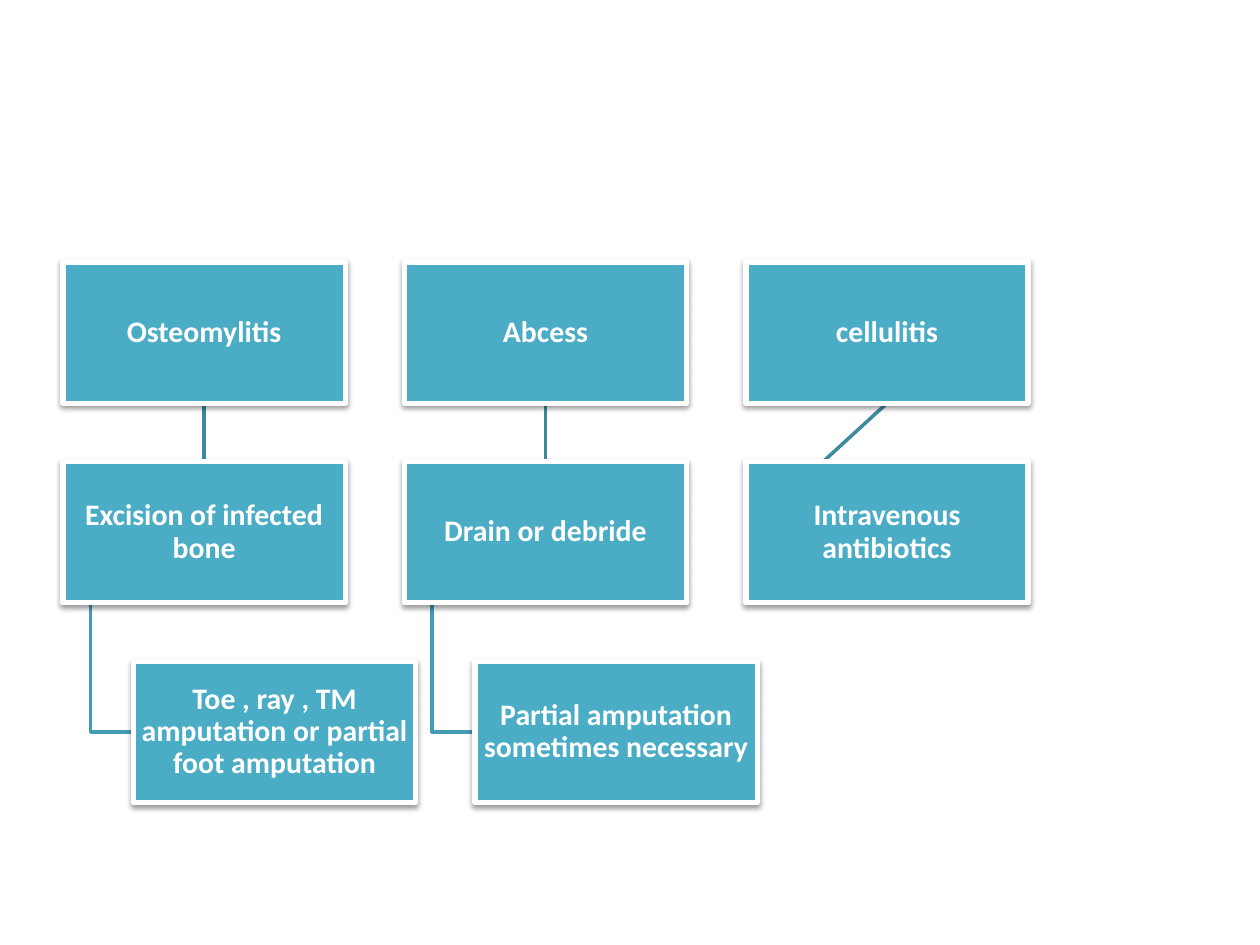
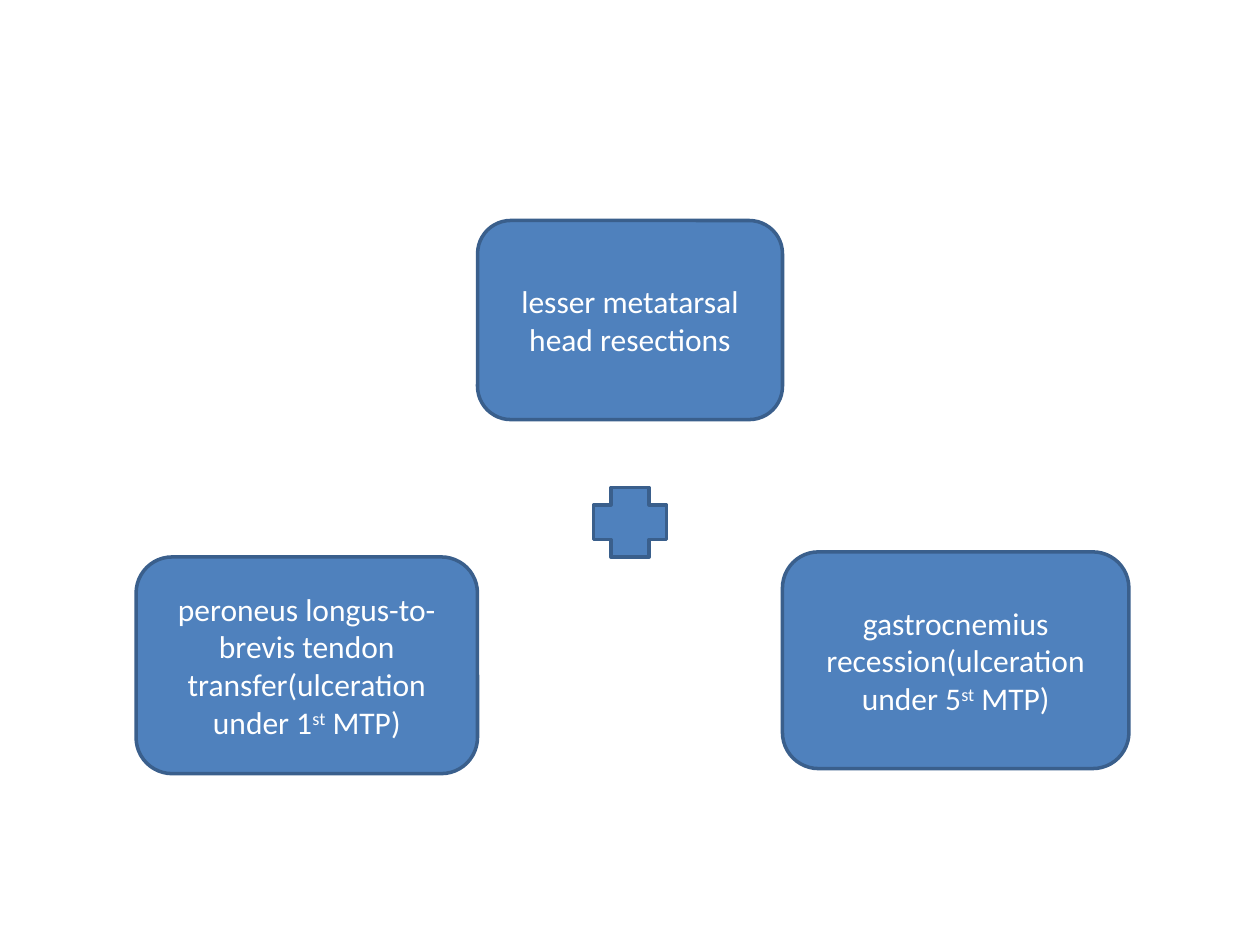
from lxml import etree
from pptx import Presentation
from pptx.dml.color import RGBColor
from pptx.enum.shapes import MSO_CONNECTOR, MSO_SHAPE
from pptx.enum.text import MSO_ANCHOR, PP_ALIGN
from pptx.oxml import parse_xml
from pptx.oxml.ns import nsdecls, qn
from pptx.util import Inches, Pt

COLORS = {
    "white": "FFFFFF",
    "teal": "4BACC6",
    "upper_link": "3C8A9F",
    "lower_link": "449CB4",
    "blue": "4F81BD",
    "blue_edge": "3A5F8C",
    "shadow": "000000",
}
FONT = "Calibri"

TREATMENTS = [
    ["Osteomylitis", "Excision of infected bone",
     "Toe , ray , TM amputation or partial foot amputation"],
    ["Abcess", "Drain or debride", "Partial amputation sometimes necessary"],
    ["cellulitis", "Intravenous antibiotics"],
]
PROCEDURES = [
    ((2.71, 0, 2.42, 1.58), ["lesser metatarsal head resections"]),
    ((5.13, 2.63, 2.75, 1.72),
     ["gastrocnemius recession(ulceration under 5", "st", " MTP)"]),
    ((0, 2.67, 2.71, 1.72),
     ["peroneus longus-to-brevis tendon transfer(ulceration under 1", "st", " MTP)"]),
]


def color(name):
    return RGBColor.from_string(COLORS[name])


def set_line(shape, name, width):
    shape.line.color.rgb = color(name)
    shape.line.width = Pt(width)


def add_box(page, kind, left, top, width, height, fill, edge, edge_width):
    box = page.shapes.add_shape(
        kind, Inches(left), Inches(top), Inches(width), Inches(height))
    box.shadow.inherit = False
    box.fill.solid()
    box.fill.fore_color.rgb = color(fill)
    set_line(box, edge, edge_width)
    return box


def write_text(box, parts, size, bold=False):
    frame = box.text_frame
    frame.word_wrap = True
    frame.vertical_anchor = MSO_ANCHOR.MIDDLE
    para = frame.paragraphs[0]
    para.alignment = PP_ALIGN.CENTER
    for part in parts:
        span = para.add_run()
        span.text = part
        span.font.name = FONT
        span.font.size = Pt(size)
        span.font.bold = bold
        span.font.color.rgb = color("white")
        if part == "st":
            span.font._element.set("baseline", "30000")
    return frame


def add_shadow(box):
    properties = box._element.spPr
    properties.remove(properties.find(qn("a:effectLst")))
    properties.append(parse_xml(
        f'<a:effectLst {nsdecls("a")}><a:outerShdw blurRad="{Pt(3.1)}" '
        f'dist="{Pt(1.6)}" dir="5400000" rotWithShape="0">'
        f'<a:srgbClr val="{COLORS["shadow"]}"><a:alpha val="38000"/></a:srgbClr>'
        '</a:outerShdw></a:effectLst>'))


def send_to_back(shape):
    shape._element.getparent().insert(2, shape._element)


def link_boxes(page, upper, lower, lower_site):
    link = page.shapes.add_connector(MSO_CONNECTOR.STRAIGHT, 0, 0, 0, 0)
    link.begin_connect(upper, 2)
    link.end_connect(lower, lower_site)
    set_line(link, "upper_link", 2)
    etree.SubElement(link._element.spPr, qn("a:effectLst"))
    send_to_back(link)


def add_elbow(page, upper, lower):
    left = upper.left + Inches(0.22)
    top = upper.top + upper.height
    middle = lower.top + lower.height // 2
    outline = page.shapes.build_freeform(left, top)
    outline.add_line_segments([(left, middle), (lower.left, middle)], close=False)
    elbow = outline.convert_to_shape()
    elbow.shadow.inherit = False
    elbow.fill.background()
    set_line(elbow, "lower_link", 2)
    send_to_back(elbow)


def add_treatment_column(page, left, top, labels):
    row_step, indent = 1.585, 0.56
    boxes = []
    for row, label in enumerate(labels):
        box = add_box(page, MSO_SHAPE.RECTANGLE,
                      left + (indent if row == 2 else 0), top + row * row_step,
                      2.24, 1.12, "teal", "white", 3)
        add_shadow(box)
        frame = write_text(box, [label], 17, bold=True)
        frame.margin_left = frame.margin_right = Inches(0.01)
        frame.margin_top = frame.margin_bottom = Inches(0.01)
        frame.paragraphs[0].line_spacing = 0.9
        boxes.append(box)
    has_follow_up = len(boxes) == 3
    link_boxes(page, boxes[0], boxes[1], 0 if has_follow_up else 1)
    if has_follow_up:
        add_elbow(page, boxes[1], boxes[2])


def build_treatments(page, left, top):
    for column, labels in enumerate(TREATMENTS):
        add_treatment_column(page, left + column * 2.71, top, labels)


def build_procedures(page, left, top):
    style = ("blue", "blue_edge", 2)
    for (x, y, width, height), parts in PROCEDURES:
        box = add_box(page, MSO_SHAPE.ROUNDED_RECTANGLE,
                      left + x, top + y, width, height, *style)
        write_text(box, parts, 18)
    add_box(page, MSO_SHAPE.CROSS, left + 3.63, top + 2.12, 0.58, 0.55, *style)


def main():
    deck = Presentation()
    deck.slide_width, deck.slide_height = Inches(10), Inches(7.5)
    blank = deck.slide_layouts[6]
    build_treatments(deck.slides.add_slide(blank), 0.5, 2.08)
    build_procedures(deck.slides.add_slide(blank), 1.08, 1.75)
    deck.save("out.pptx")


if __name__ == "__main__":
    main()
